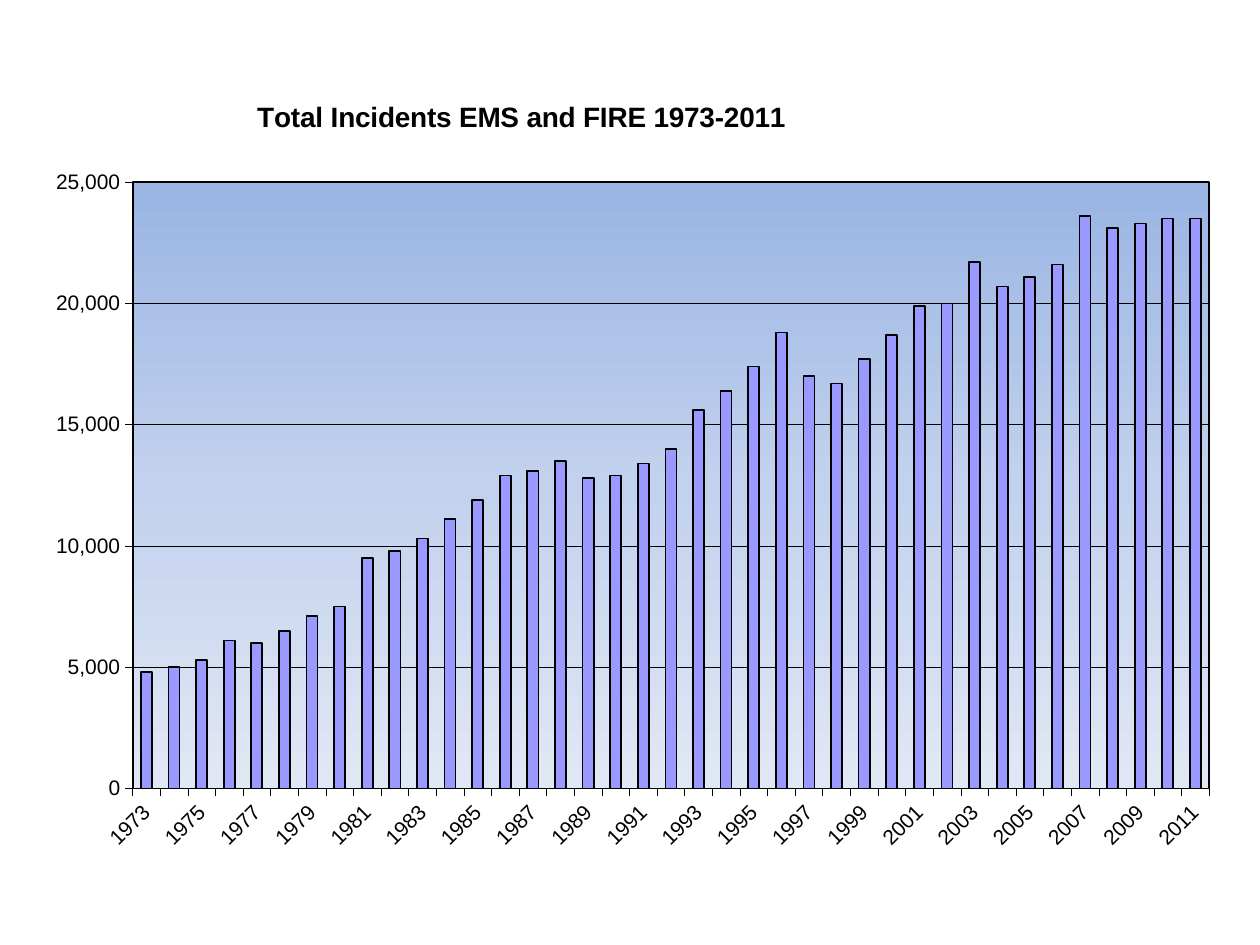
import pptx
import pptx.chart.data
import pptx.dml.color
import pptx.enum.chart
import pptx.oxml
import pptx.oxml.ns
import pptx.util
from pptx.util import Cm

TITLE = "Total Incidents EMS and FIRE 1973-2011"
FIRST_YEAR = 1973
INCIDENTS = [
    4800, 5000, 5300, 6100, 6000, 6500, 7100, 7500, 9500, 9800,
    10300, 11100, 11900, 12900, 13100, 13500, 12800, 12900, 13400, 14000,
    15600, 16400, 17400, 18800, 17000, 16700, 17700, 18700, 19900, 20000,
    21700, 20700, 21100, 21600, 23600, 23100, 23300, 23500, 23500,
]
BLACK = pptx.dml.color.RGBColor(0x00, 0x00, 0x00)
BAR = pptx.dml.color.RGBColor(0x99, 0x99, 0xFF)
SKY_TOP = pptx.dml.color.RGBColor(0x9A, 0xB5, 0xE4)
SKY_MIDDLE = pptx.dml.color.RGBColor(0xC2, 0xD1, 0xED)
SKY_BOTTOM = pptx.dml.color.RGBColor(0xE1, 0xE8, 0xF5)
PLOT_GRADIENT = [(0, SKY_TOP), (50, SKY_MIDDLE), (100, SKY_BOTTOM)]
FONT = "Arial"
CHART_XML = pptx.oxml.ns.nsdecls("c", "a")


def format_font(font, size, bold=False, color=BLACK):
    font.name = FONT
    font.size = pptx.util.Pt(size)
    font.bold = bold
    font.color.rgb = color


def write_text(text_frame, text, **font_format):
    paragraph = text_frame.paragraphs[0]
    run = paragraph.add_run()
    run.text = text
    format_font(run.font, **font_format)


def format_line(line, width):
    line.color.rgb = BLACK
    line.width = pptx.util.Pt(width)


def set_layout(element, index, target=None, **lengths):
    for layout in element.findall(pptx.oxml.ns.qn("c:layout")):
        element.remove(layout)
    settings = [("layoutTarget", target)] if target else []
    settings += [("xMode", "edge"), ("yMode", "edge"), *lengths.items()]
    body = "".join(f'<c:{name} val="{value}"/>' for name, value in settings)
    element.insert(index, pptx.oxml.parse_xml(
        f"<c:layout {CHART_XML}><c:manualLayout>{body}</c:manualLayout></c:layout>"))


def fill_plot_area(plot_area):
    stops = "".join(
        f'<a:gs pos="{position * 1000}"><a:srgbClr val="{color}"/></a:gs>'
        for position, color in PLOT_GRADIENT)
    plot_area.append(pptx.oxml.parse_xml(
        f'<c:spPr {CHART_XML}><a:gradFill><a:gsLst>{stops}</a:gsLst>'
        f'<a:lin ang="5400000" scaled="0"/></a:gradFill>'
        f'<a:ln w="12700"><a:solidFill><a:srgbClr val="{BLACK}"/></a:solidFill></a:ln></c:spPr>'))


def format_axis(axis):
    axis.major_tick_mark = pptx.enum.chart.XL_TICK_MARK.OUTSIDE
    axis.minor_tick_mark = pptx.enum.chart.XL_TICK_MARK.NONE
    format_font(axis.tick_labels.font, size=12)
    format_line(axis.format.line, 0.25)


def add_incident_chart(slide):
    data = pptx.chart.data.CategoryChartData(number_format="#,##0")
    data.categories = [str(FIRST_YEAR + offset) for offset in range(len(INCIDENTS))]
    data.add_series("Series 1", INCIDENTS)
    chart = slide.shapes.add_chart(
        pptx.enum.chart.XL_CHART_TYPE.COLUMN_CLUSTERED,
        Cm(0.79), Cm(1.42), Cm(23.85), Cm(16.21), data).chart
    chart.has_legend = False
    format_font(chart.font, size=12)

    chart.has_title = True
    write_text(chart.chart_title.text_frame, TITLE, size=16, bold=True)
    title = chart.chart_title._element
    set_layout(title, 1, x=0.18, y=0.03)

    plot = chart.plots[0]
    plot.gap_width = 150
    plot.vary_by_categories = False
    series = plot.series[0]
    series.format.fill.solid()
    series.format.fill.fore_color.rgb = BAR
    format_line(series.format.line, 1)

    years = chart.category_axis
    format_axis(years)
    years_element = years._element
    years_element.txPr.find(pptx.oxml.ns.qn("a:bodyPr")).set("rot", "-2700000")
    no_multi_level = years_element.find(pptx.oxml.ns.qn("c:noMultiLvlLbl"))
    for name, step in [("tickLblSkip", 2), ("tickMarkSkip", 1)]:
        no_multi_level.addprevious(
            pptx.oxml.parse_xml(f'<c:{name} {CHART_XML} val="{step}"/>'))

    counts = chart.value_axis
    format_axis(counts)
    counts.minimum_scale = 0
    counts.maximum_scale = 25000
    counts.major_unit = 5000
    counts.tick_labels.number_format = "#,##0"
    counts.tick_labels.number_format_is_linked = False
    counts.has_major_gridlines = True
    format_line(counts.major_gridlines.format.line, 0.25)

    plot_area = years_element.getparent()
    set_layout(plot_area, 0, target="inner", x=0.079, y=0.139, w=0.91, h=0.754)
    fill_plot_area(plot_area)


def main():
    presentation = pptx.Presentation()
    presentation.slide_width = Cm(25.4)
    presentation.slide_height = Cm(19.05)
    slide = presentation.slides.add_slide(presentation.slide_layouts[6])
    add_incident_chart(slide)
    presentation.save("out.pptx")


if __name__ == "__main__":
    main()
